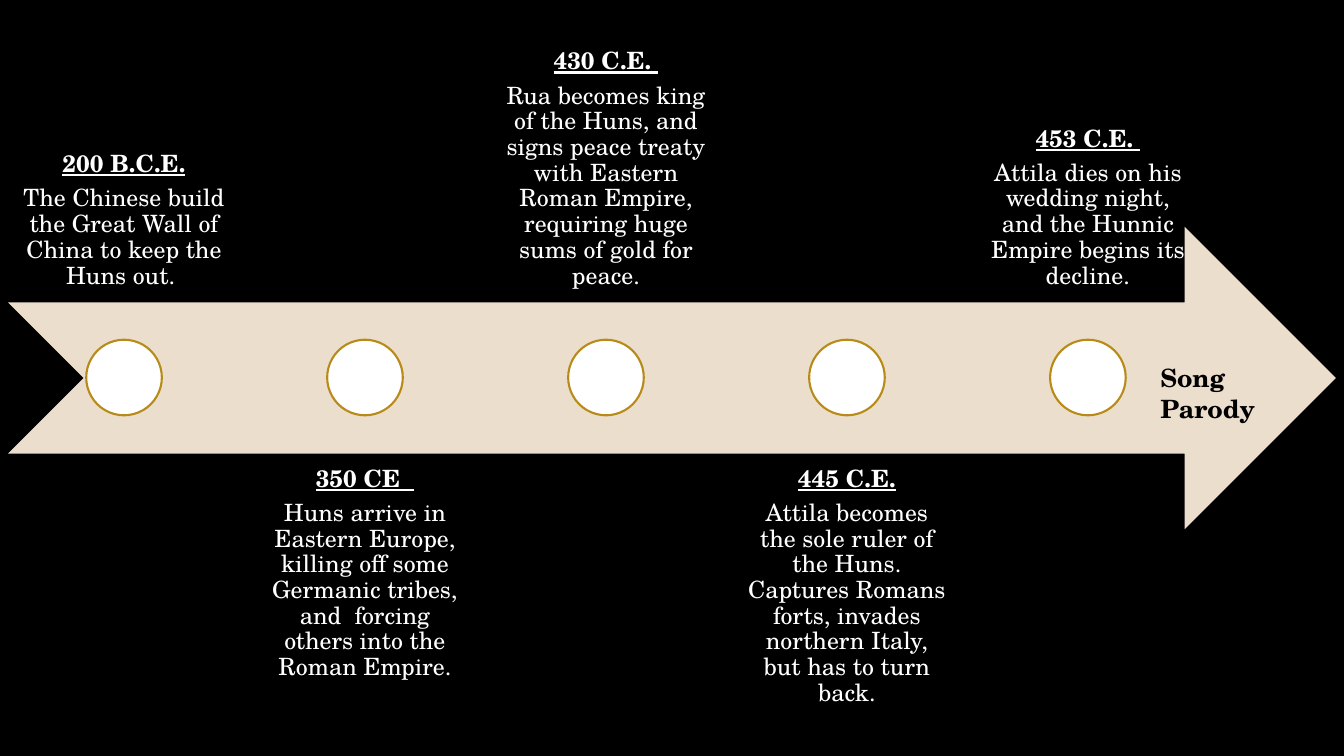
from pptx import Presentation
from pptx.dml.color import RGBColor
from pptx.enum import shapes, text
from pptx.util import Inches, Pt

FONT = "TeX Gyre Schola"
EVENTS = [
    ("200 B.C.E.", "The Chinese build the Great Wall of China to keep the Huns out. "),
    ("350 CE  ", "Huns arrive in Eastern Europe, killing off some Germanic tribes, "
                 "and  forcing others into the Roman Empire."),
    ("430 C.E. ", "Rua becomes king of the Huns, and signs peace treaty with Eastern "
                  "Roman Empire, requiring huge sums of gold for peace."),
    ("445 C.E.", "Attila becomes the sole ruler of the Huns. Captures Romans forts, "
                 "invades northern Italy, but has to turn back."),
    ("453 C.E. ", "Attila dies on his wedding night, and the Hunnic Empire begins "
                  "its decline."),
]
ARROW_LABEL = "Song Parody"

# Layout in inches
FIRST_LEFT, STEP = 0.09, 2.39
BOX_WIDTH, BOX_HEIGHT = 2.28, 3
UPPER_TOP, LOWER_TOP = 0, 4.5
MARKER_SIZE, MARKER_TOP = 0.75, 3.37
BOX_INSET = 0.13


def color(value):
    return RGBColor.from_string(value)


def add_shape(slide, kind, left, top, width, height, fill, line=None):
    shape = slide.shapes.add_shape(kind, *map(Inches, (left, top, width, height)))
    shape.shadow.inherit = False
    shape.fill.solid()
    shape.fill.fore_color.rgb = color(fill)
    if line:
        shape.line.color.rgb = color(line)
        shape.line.width = Pt(1.5)
    else:
        shape.line.fill.background()


def add_box(slide, left, top, width, height):
    box = slide.shapes.add_textbox(*map(Inches, (left, top, width, height)))
    box.text_frame.word_wrap = True
    return box.text_frame


def add_run(paragraph, words, size, fill, bold, underline=False):
    run = paragraph.add_run()
    run.text = words
    run.font.name = FONT
    run.font.size = Pt(size)
    run.font.color.rgb = color(fill)
    run.font.bold = bold
    run.font.underline = underline


def add_event(slide, index, date, description):
    left = FIRST_LEFT + index * STEP
    above = index % 2 == 0
    frame = add_box(slide, left, UPPER_TOP if above else LOWER_TOP, BOX_WIDTH, BOX_HEIGHT)
    frame.vertical_anchor = text.MSO_ANCHOR.BOTTOM if above else text.MSO_ANCHOR.TOP
    frame.margin_left = frame.margin_right = Inches(BOX_INSET)
    frame.margin_top = frame.margin_bottom = Inches(BOX_INSET)

    # Date heading, then description
    heading, body = frame.paragraphs[0], frame.add_paragraph()
    for paragraph in (heading, body):
        paragraph.alignment = text.PP_ALIGN.CENTER
        paragraph.line_spacing = 0.9
    heading.space_after = Pt(6)
    add_run(heading, date, 17, "FFFFFF", True, True)
    add_run(body, description, 17, "FFFFFF", False)

    # Marker centred on the text column
    add_shape(slide, shapes.MSO_SHAPE.OVAL, left + (BOX_WIDTH - MARKER_SIZE) / 2,
              MARKER_TOP, MARKER_SIZE, MARKER_SIZE, "FFFFFF", "B88B19")


def main():
    presentation = Presentation()
    presentation.slide_width = Inches(13.33)
    presentation.slide_height = Inches(7.5)
    slide = presentation.slides.add_slide(presentation.slide_layouts[6])
    slide.background.fill.solid()
    slide.background.fill.fore_color.rgb = color("000000")

    # Timeline arrow and events
    add_shape(slide, shapes.MSO_SHAPE.NOTCHED_RIGHT_ARROW, 0.08, 2.25, 13.17, 3, "ECDECD")
    for index, (date, description) in enumerate(EVENTS):
        add_event(slide, index, date, description)

    # Label in the arrowhead
    label = add_box(slide, 11.41, 3.55, 1.67, 0.7)
    add_run(label.paragraphs[0], ARROW_LABEL, 18, "000000", True)

    presentation.save("out.pptx")


if __name__ == "__main__":
    main()
